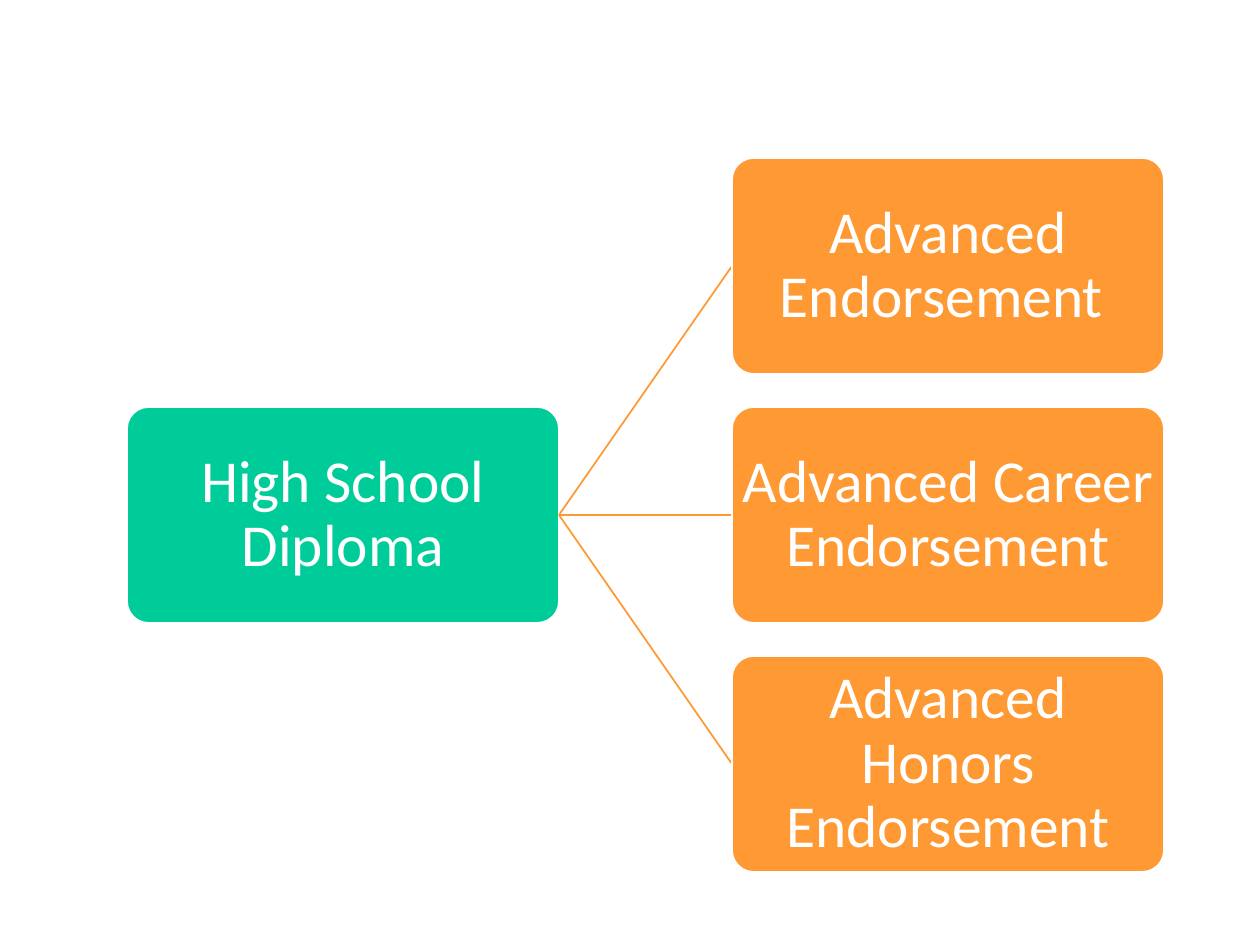
from dataclasses import dataclass

from lxml.etree import SubElement
from pptx import Presentation
from pptx.dml.color import RGBColor
from pptx.enum.shapes import MSO_CONNECTOR as Connector, MSO_SHAPE as Shape
from pptx.enum.text import MSO_ANCHOR as Anchor, PP_ALIGN as Align
from pptx.oxml.ns import qn
from pptx.shapes.autoshape import Shape as AutoShape
from pptx.slide import Slide
from pptx.util import Emu, Pt

GREEN = RGBColor(0x00, 0xCC, 0x99)
ORANGE = RGBColor(0xFF, 0x99, 0x33)
WHITE = RGBColor(0xFF, 0xFF, 0xFF)

PX_PER_INCH = 126
BOX_WIDTH, BOX_HEIGHT = 432, 216
ROOT_LEFT, BRANCH_LEFT = 127, 732
FIRST_TOP, ROW_PITCH = 158, 249
TEXT_INSET = 3
RIGHT_SIDE, LEFT_SIDE = 3, 1


@dataclass(frozen=True)
class Node:
    text: str
    left: int
    row: int
    color: RGBColor


ROOT = Node("High School Diploma", ROOT_LEFT, 1, GREEN)
BRANCHES = [
    Node(text, BRANCH_LEFT, row, ORANGE)
    for row, text in enumerate([
        "Advanced Endorsement ",
        "Advanced Career Endorsement",
        "Advanced Honors Endorsement",
    ])
]


def px(count: int) -> Emu:
    return Emu(round(count * 914400 / PX_PER_INCH))


def add_node(page: Slide, node: Node) -> AutoShape:
    """Draw a rounded box with its centred label."""
    box = page.shapes.add_shape(
        Shape.ROUNDED_RECTANGLE, px(node.left),
        px(FIRST_TOP + node.row * ROW_PITCH), px(BOX_WIDTH), px(BOX_HEIGHT))
    box.adjustments[0] = 0.1
    box.shadow.inherit = False
    box.fill.solid()
    box.fill.fore_color.rgb = node.color
    box.line.color.rgb = WHITE
    box.line.width = Pt(1)

    frame = box.text_frame
    frame.word_wrap = True
    frame.vertical_anchor = Anchor.MIDDLE
    frame.margin_left = frame.margin_right = px(TEXT_INSET)
    frame.margin_top = frame.margin_bottom = px(TEXT_INSET)
    para = frame.paragraphs[0]
    para.alignment = Align.CENTER
    para.line_spacing = 0.9
    span = para.add_run()
    span.text = node.text
    span.font.name = "Calibri"
    span.font.size = Pt(34)
    span.font.color.rgb = WHITE
    return box


def add_branch(page: Slide, root_box: AutoShape, node: Node) -> None:
    """Draw a box and, beneath its outline, the line from the root."""
    link = page.shapes.add_connector(Connector.STRAIGHT, 0, 0, 0, 0)
    link.line.color.rgb = ORANGE
    link.line.width = Pt(1)
    SubElement(link._element.spPr, qn("a:effectLst"))
    box = add_node(page, node)
    link.begin_connect(root_box, RIGHT_SIDE)
    link.end_connect(box, LEFT_SIDE)


def main() -> None:
    deck = Presentation()
    deck.slide_width, deck.slide_height = px(1260), px(945)
    page = deck.slides.add_slide(deck.slide_layouts[6])

    # Diploma on the left, endorsements branching to the right
    root_box = add_node(page, ROOT)
    for node in BRANCHES:
        add_branch(page, root_box, node)

    deck.save("out.pptx")


if __name__ == "__main__":
    main()
